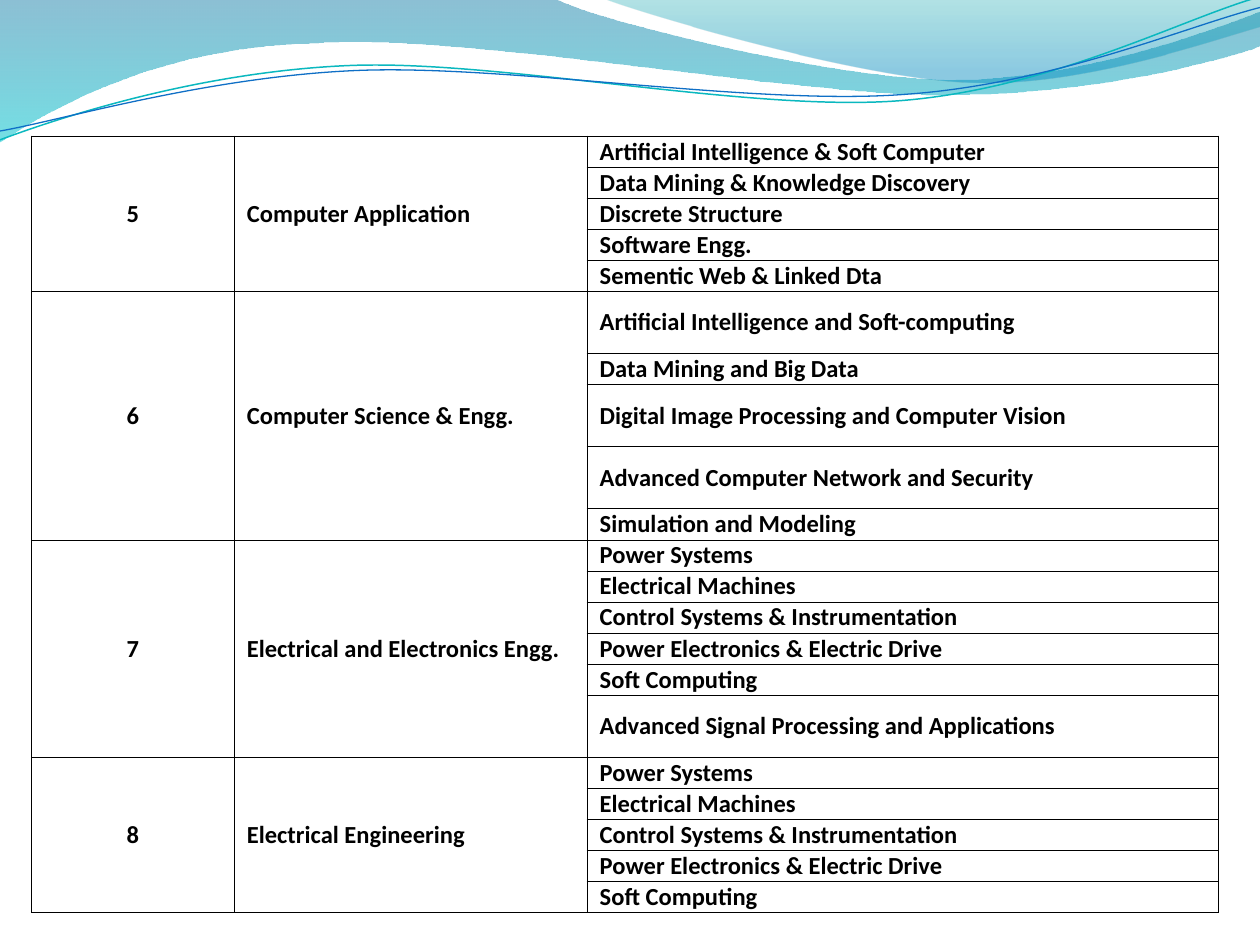
from math import cos, radians, sin
from lxml.etree import SubElement
from pptx import Presentation
from pptx.dml.color import RGBColor
from pptx.enum.text import MSO_ANCHOR, PP_ALIGN
from pptx.oxml import parse_xml
from pptx.oxml.ns import nsdecls, qn
from pptx.util import Inches, Pt

COLORS = {
    "ink": "000000", "deep": "0074A1", "aqua": "00C6CF", "teal": "00A1A9",
    "sky": "008BBF", "teal_line": "0AB8BF", "blue_line": "0F6FC6",
}
FONT, TEXT_SIZE = "Calibri", Pt(14)
STRAND_TILT = 2.7

WAVES = [
    ([(0, 0), (4.4, -0.01),
      (4.76, 0.17, 6.64, 0.63, 7.58, 0.63), (8.53, 0.63, 9.58, 0.26, 10, 0.09),
      (10.01, 0.36),
      (9.83, 0.44, 8.7, 0.76, 7.46, 0.75), (6.22, 0.75, 3.82, 0.28, 2.57, 0.34),
      (1.29, 0.36, 0.46, 0.83, -0.01, 1.13), (0, 0)],
     [(0, "deep", 45), (1, "aqua", 55)]),
    ([(4.79, -0.01),
      (5.09, 0.11, 6.82, 0.62, 7.69, 0.65), (8.56, 0.69, 9.61, 0.32, 10, 0.21),
      (10, 0), (4.79, -0.01)],
     [(0, "teal", 30), (0.8, "sky", 45)]),
]
STRANDS = [
    ([(0, 1.11), (0.48, 0.93, 1.58, 0.57, 2.77, 0.52),
      (3.95, 0.47, 5.93, 0.89, 7.13, 0.8), (8.33, 0.71, 9.38, 0.15, 9.98, -0.02)],
     (4.99, 0.58), "teal_line", 0.85),
    ([(0, 1.04), (0.47, 0.96, 1.64, 0.61, 2.83, 0.56),
      (4.03, 0.51, 5.97, 0.84, 7.17, 0.75), (8.36, 0.67, 9.41, 0.21, 10, 0.06)],
     (5, 0.59), "blue_line", 0.75),
]

DEPARTMENTS = [
    ("5", "Computer Application", MSO_ANCHOR.BOTTOM, [
        "Artificial Intelligence & Soft Computer",
        "Data Mining & Knowledge Discovery",
        "Discrete Structure",
        "Software Engg.",
        "Sementic Web & Linked Dta"]),
    ("6", "Computer Science & Engg.", MSO_ANCHOR.MIDDLE, [
        "Artificial Intelligence and Soft-computing",
        "Data Mining and Big Data",
        "Digital Image Processing and Computer Vision",
        "Advanced Computer Network and Security",
        "Simulation and Modeling"]),
    ("7", "Electrical and Electronics Engg.", MSO_ANCHOR.MIDDLE, [
        "Power Systems",
        "Electrical Machines",
        "Control Systems & Instrumentation",
        "Power Electronics & Electric Drive",
        "Soft Computing",
        "Advanced Signal Processing and Applications"]),
    ("8", "Electrical Engineering", MSO_ANCHOR.MIDDLE, [
        "Power Systems",
        "Electrical Machines",
        "Control Systems & Instrumentation",
        "Power Electronics & Electric Drive",
        "Soft Computing"]),
]
DOUBLE_HEIGHT = {
    "Artificial Intelligence and Soft-computing",
    "Digital Image Processing and Computer Vision",
    "Advanced Computer Network and Security",
    "Advanced Signal Processing and Applications",
}
LEFT, TOP, HEIGHT = 0.25, 1.08, 6.17
COLUMN_WIDTHS = [1.61, 2.8, 5.01]


def rgb(key):
    return RGBColor.from_string(COLORS[key])


def pairs(segment):
    return list(zip(segment[::2], segment[1::2]))


def turn(segment, center, degrees):
    c, s = cos(radians(degrees)), sin(radians(degrees))
    turned = []
    for x, y in pairs(segment):
        dx, dy = x - center[0], y - center[1]
        turned += [center[0] + dx * c - dy * s, center[1] + dx * s + dy * c]
    return tuple(turned)


def draw_curve(slide, segments, close):
    points = [(Inches(x), Inches(y)) for segment in segments for x, y in pairs(segment)]
    builder = slide.shapes.build_freeform(*points[0])
    builder.add_line_segments(points[1:], close=close)
    curve = builder.convert_to_shape()
    curve.shadow.inherit = False
    lines = iter(list(curve._element.iter(qn("a:lnTo"))))
    for segment in segments[1:]:
        line = next(lines)
        if len(segment) == 6:
            line.addprevious(bezier := parse_xml(f'<a:cubicBezTo {nsdecls("a")}/>'))
            for control in (line, next(lines), next(lines)):
                bezier.append(control[0])
                control.getparent().remove(control)
    return curve


def draw_wave(slide, segments, stops):
    wave = draw_curve(slide, segments, True)
    wave.line.fill.background()
    wave.fill.gradient()
    wave.fill.gradient_angle = 270
    for stop, (position, color, _) in zip(wave.fill.gradient_stops, stops):
        stop.position = position
        stop.color.rgb = rgb(color)
    for tint, (_, _, opacity) in zip(wave._element.spPr.iter(qn("a:srgbClr")), stops):
        SubElement(tint, qn("a:alpha"), val=str(opacity * 1000))


def draw_strand(slide, segments, center, color, width):
    level = [turn(segment, center, STRAND_TILT) for segment in segments]
    strand = draw_curve(slide, level, False)
    strand.rotation = 360 - STRAND_TILT
    strand.fill.background()
    strand.line.color.rgb = rgb(color)
    strand.line.width = Pt(width)


def add_borders(cell):
    properties = cell._tc.get_or_add_tcPr()
    for index, side in enumerate("LRTB"):
        properties.insert(index, parse_xml(
            f'<a:ln{side} {nsdecls("a")} w="{Pt(0.5)}"><a:solidFill>'
            f'<a:srgbClr val="{COLORS["ink"]}"/></a:solidFill></a:ln{side}>'))


def write(cell, words, anchor=MSO_ANCHOR.MIDDLE, centered=False):
    cell.text = words
    cell.vertical_anchor = anchor
    paragraph = cell.text_frame.paragraphs[0]
    if centered:
        paragraph.alignment = PP_ALIGN.CENTER
    else:
        paragraph.level = 1
        paragraph.alignment = PP_ALIGN.LEFT
        properties = paragraph._p.get_or_add_pPr()
        properties.set("marL", str(Inches(0.1)))
        properties.set("indent", "0")
    font = paragraph.font
    font.name, font.size, font.bold = FONT, TEXT_SIZE, True
    font.color.rgb = rgb("ink")


def add_departments(slide):
    subjects = [subject for department in DEPARTMENTS for subject in department[3]]
    units = [2 if subject in DOUBLE_HEIGHT else 1 for subject in subjects]
    table = slide.shapes.add_table(
        len(subjects), len(COLUMN_WIDTHS), Inches(LEFT), Inches(TOP),
        Inches(sum(COLUMN_WIDTHS)), Inches(HEIGHT)).table
    table.first_row = table.horz_banding = False
    for column, width in zip(table.columns, COLUMN_WIDTHS):
        column.width = Inches(width)
    for row, unit in zip(table.rows, units):
        row.height = Inches(HEIGHT * unit / sum(units))
    for cell in table.iter_cells():
        cell.margin_left = cell.margin_right = cell.margin_top = cell.margin_bottom = 0
        cell.fill.background()
        add_borders(cell)
        cell.text_frame.paragraphs[0].font.size = TEXT_SIZE
    first = 0
    for number, department, anchor, topics in DEPARTMENTS:
        last = first + len(topics) - 1
        for column in (0, 1):
            table.cell(first, column).merge(table.cell(last, column))
        write(table.cell(first, 0), number, centered=True)
        write(table.cell(first, 1), department)
        for offset, topic in enumerate(topics):
            write(table.cell(first + offset, 2), topic, anchor)
        first = last + 1


def main():
    deck = Presentation()
    deck.slide_width, deck.slide_height = Inches(10), Inches(7.5)
    slide = deck.slides.add_slide(deck.slide_layouts[6])
    for wave in WAVES:
        draw_wave(slide, *wave)
    for strand in STRANDS:
        draw_strand(slide, *strand)
    add_departments(slide)
    deck.save("out.pptx")


if __name__ == "__main__":
    main()
